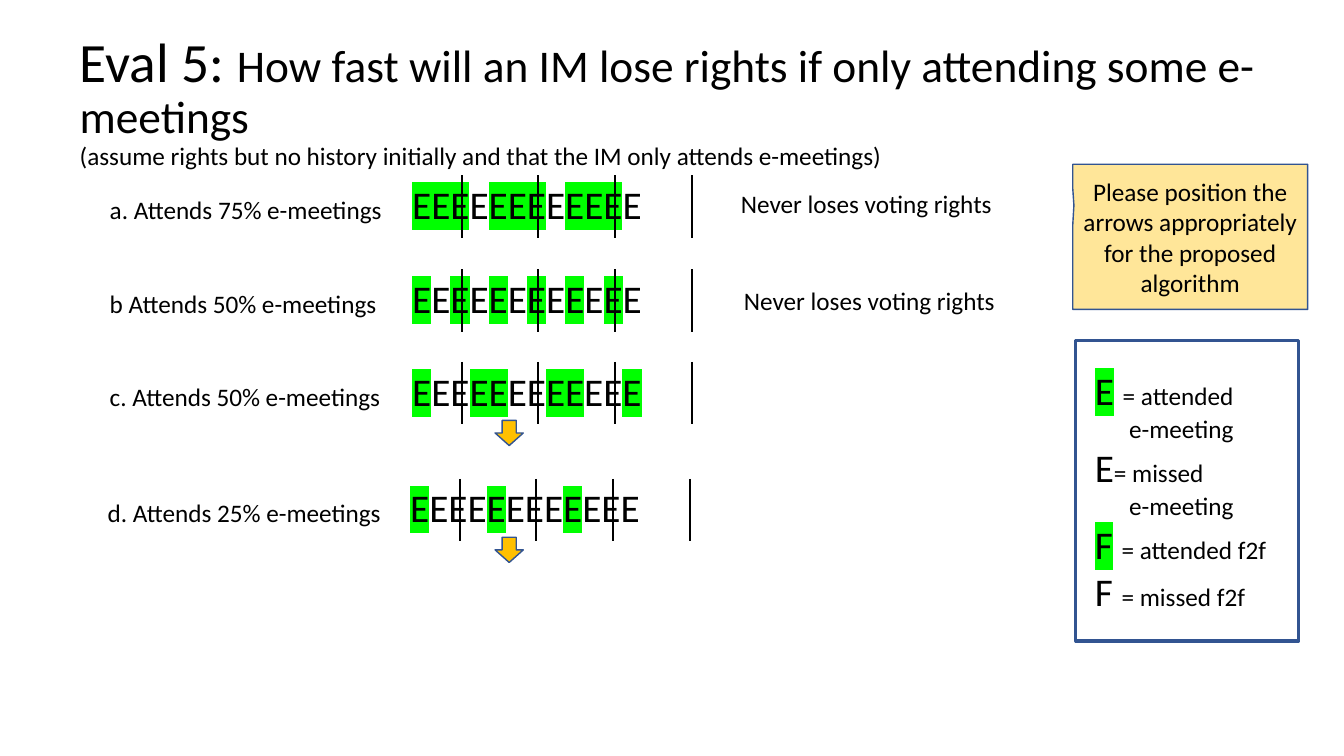
from itertools import groupby

from lxml.etree import SubElement
from pptx import Presentation
from pptx.dml.color import RGBColor
from pptx.enum.shapes import MSO_CONNECTOR as Conn, MSO_SHAPE as Shape
from pptx.enum.text import MSO_ANCHOR as Anchor, MSO_AUTO_SIZE as Auto, PP_ALIGN as Align
from pptx.oxml.ns import qn
from pptx.util import Inches, Pt

C = {"black": "000000", "green": "00FF00", "blue": "325491",
     "sand": "FFE699", "amber": "FFC000"}
FONT = "Calibri"
SMALL, BIG = 18, 28

# Meeting rows: left, top, label, attendance (1 = attended), loses rights
ROWS = [
    (0.49, 1.74, "a. Attends 75% e-meetings\t", "111011101110", False),
    (0.49, 2.67, "b Attends 50% e-meetings \t", "101010101010", False),
    (0.49, 3.59, "c. Attends 50% e-meetings \t", "100110011001", True),
    (0.47, 4.75, "d. Attends 25% e-meetings \t", "100010001000", True),
]
ROW_W, ROW_H, BAR_H = 6.53, 0.57, 0.62
BAR_X, BAR_STEP, BAR_COUNT = 4.09, 0.76, 4


def rgb(name):
    return RGBColor.from_string(C[name])


def box(x, y, w, h):
    return [Inches(v) for v in (x, y, w, h)]


def add_run(p, text, size=SMALL, mark=None):
    r = p.add_run()
    r.text = text
    if mark:
        hl = SubElement(r.font._element, qn("a:highlight"))
        SubElement(hl, qn("a:srgbClr")).set("val", C[mark])
    r.font.size = Pt(size)
    r.font.name = FONT
    r.font.color.rgb = rgb("black")
    return r


def indent(p, width):
    pPr = p._p.get_or_add_pPr()
    pPr.set("marL", str(Inches(width)))
    pPr.set("indent", "0")


def add_text(shapes, place, wrap=True):
    tf = shapes.add_textbox(*box(*place)).text_frame
    tf.word_wrap = wrap
    tf.auto_size = Auto.SHAPE_TO_FIT_TEXT
    return tf


def add_box(shapes, kind, place, fill=None, width=1):
    sp = shapes.add_shape(kind, *box(*place))
    sp.shadow.inherit = False
    if fill:
        sp.fill.solid()
        sp.fill.fore_color.rgb = rgb(fill)
    else:
        sp.fill.background()
    sp.line.color.rgb = rgb("blue")
    sp.line.width = Pt(width)
    return sp


def add_bar(shapes, x, y, h):
    ln = shapes.add_connector(Conn.STRAIGHT, *box(x, y, x, y + h))
    ln.line.color.rgb = rgb("black")
    ln.line.width = Pt(1.5)
    SubElement(ln._element.spPr, qn("a:effectLst"))


def add_title(s, place):
    title = s.shapes.title
    title.left, title.top, title.width, title.height = box(*place)
    tf = title.text_frame
    tf.word_wrap = True
    tf.auto_size = Auto.NONE
    tf.vertical_anchor = Anchor.MIDDLE
    p = tf.paragraphs[0]
    p.alignment = Align.LEFT
    p.line_spacing = 0.9
    add_run(p, "Eval 5: ", size=39.6)
    add_run(p, "How fast will an IM lose rights if only attending some e-meetings", size=32.4)
    p.add_line_break()
    add_run(p, "(assume rights but no history initially and that the IM only attends e-meetings)")


def add_row(s, x, y, label, attendance):
    shapes = s.shapes.add_group_shape().shapes
    p = add_text(shapes, (x, y, ROW_W, ROW_H)).paragraphs[0]
    p.level = 1
    indent(p, 0.5)
    add_run(p, label)
    for attended, span in groupby(attendance):
        add_run(p, "E" * len(list(span)), size=BIG,
                mark="green" if attended == "1" else None)
    for i in range(BAR_COUNT):
        add_bar(shapes, x + BAR_X + i * BAR_STEP, y, BAR_H)


def add_arrow(s, row_top):
    sp = add_box(s.shapes, Shape.UP_ARROW, (4.91, row_top + 0.58, 0.28, 0.25), fill="amber")
    sp.rotation = 180


def add_callout(s, place):
    sp = add_box(s.shapes, Shape.RECTANGULAR_CALLOUT, place, fill="sand")
    sp.adjustments[0], sp.adjustments[1] = -0.495, -0.217
    tf = sp.text_frame
    tf.word_wrap = True
    tf.vertical_anchor = Anchor.MIDDLE
    lines = ["Please position the arrows appropriately", "for the proposed algorithm"]
    for i, text in enumerate(lines):
        p = tf.add_paragraph() if i else tf.paragraphs[0]
        p.alignment = Align.CENTER
        add_run(p, text)


def add_legend(s, x, y, w, h):
    shapes = s.shapes.add_group_shape().shapes
    tf = add_text(shapes, (x + 0.09, y + 0.2, w - 0.28, h - 0.39), wrap=False)
    # Letter, gap, highlight, meaning
    entries = [
        ("E", " ", "green", "= attended"),
        ("", "", None, "e-meeting"),
        ("E", "", None, "= missed"),
        ("", "", None, "e-meeting"),
        ("F", " ", "green", "= attended f2f"),
        ("F", " ", None, "= missed f2f"),
    ]
    for i, (letter, gap, mark, meaning) in enumerate(entries):
        p = tf.add_paragraph() if i else tf.paragraphs[0]
        if letter:
            add_run(p, letter, size=BIG, mark=mark)
        else:
            indent(p, 0.34)
        if gap:
            add_run(p, gap, size=BIG)
        add_run(p, meaning)
    add_box(shapes, Shape.RECTANGLE, (x, y, w, h), width=2.25)


def add_verdict(s, x, y):
    p = add_text(s.shapes, (x, y, 2.93, 0.4)).paragraphs[0]
    add_run(p, "Never loses voting rights")


def main():
    prs = Presentation()
    prs.slide_width, prs.slide_height = Inches(13.33), Inches(7.5)
    s = prs.slides.add_slide(prs.slide_layouts[5])
    add_title(s, (0.69, 0.39, 12.28, 1.26))
    add_callout(s, (10.64, 1.63, 2.33, 1.44))
    add_legend(s, 10.67, 3.38, 2.21, 2.98)
    for x, y, label, attendance, loses in ROWS:
        add_row(s, x, y, label, attendance)
        if loses:
            add_arrow(s, y)
    add_verdict(s, 7.25, 1.82)
    add_verdict(s, 7.28, 2.78)
    prs.save("out.pptx")


if __name__ == "__main__":
    main()
